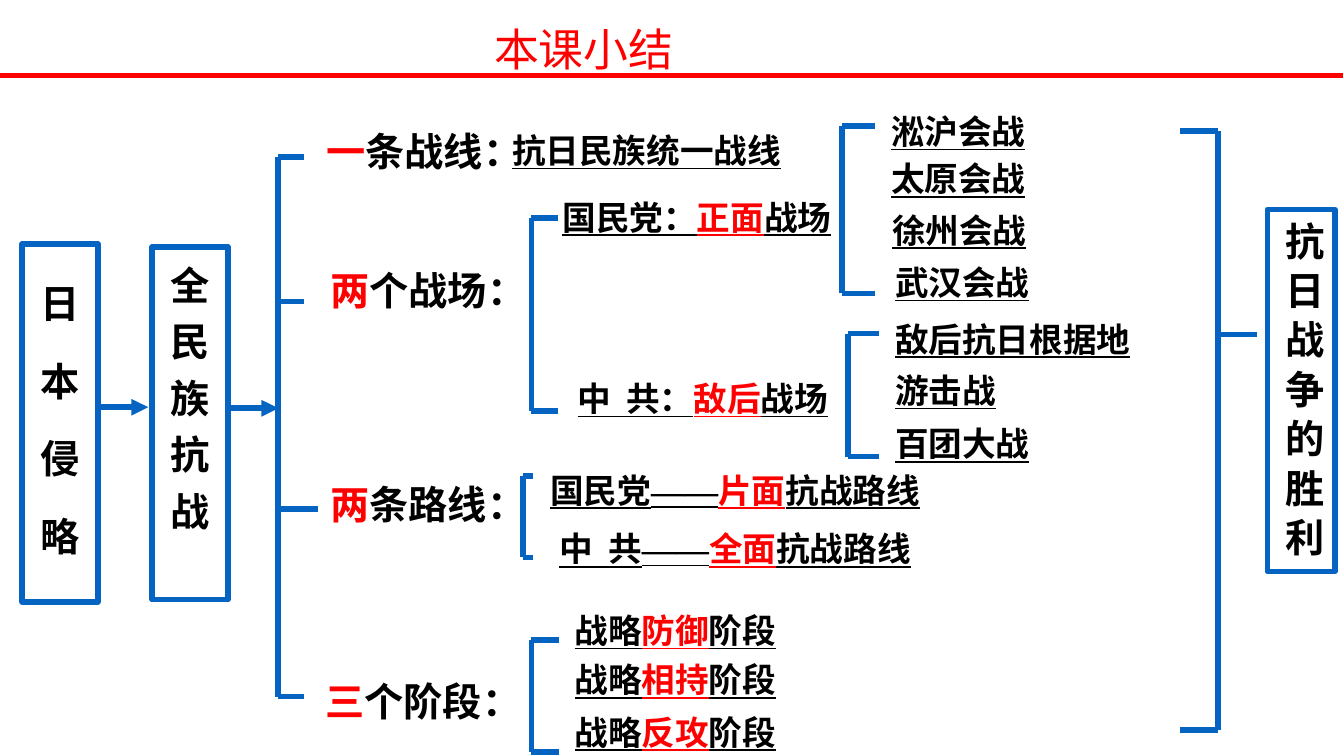
from lxml.etree import SubElement
from pptx import Presentation
from pptx.dml.color import RGBColor
from pptx.enum.shapes import MSO_CONNECTOR as CONNECTOR, MSO_SHAPE as SHAPE
from pptx.enum.text import MSO_ANCHOR as ANCHOR, MSO_AUTO_SIZE as AUTO_SIZE, PP_ALIGN as ALIGN
from pptx.oxml.ns import qn
from pptx.util import Pt

PX = 9144  # 100 px to the inch
BLUE = RGBColor(0x05, 0x63, 0xC1)
RED = RGBColor(0xFF, 0x00, 0x00)
BLACK = RGBColor(0x00, 0x00, 0x00)
SANS = "Noto Sans CJK SC"
SERIF = "Times New Roman"


def add_spans(para, text, size, color=BLACK, bold=True, underline=False):
    """Add runs split at "|"; a leading "*" makes a run red, and a dash run is serif."""
    for piece in text.split("|"):
        span = para.add_run()
        span.text = piece.lstrip("*")
        font = span.font
        font.name = SERIF if piece == "——" else SANS
        font.size = Pt(size)
        font.bold = bold
        font.underline = underline
        font.color.rgb = RED if piece.startswith("*") else color
        SubElement(font._element, qn("a:ea"), typeface=font.name)


def add_line(x1, y1, x2, y2, color=BLUE, width=4, arrow=False):
    line = slide.shapes.add_connector(
        CONNECTOR.STRAIGHT, x1 * PX, y1 * PX, x2 * PX, y2 * PX)
    line.line.color.rgb = color
    line.line.width = Pt(width)
    if arrow:
        SubElement(line.line._get_or_add_ln(), qn("a:tailEnd"), type="triangle")
    SubElement(line._element.spPr, qn("a:effectLst"))


deck = Presentation()
deck.slide_width, deck.slide_height = 1333 * PX, 750 * PX
slide = deck.slides.add_slide(deck.slide_layouts[5])

# Title and its rule
title = slide.shapes.title
title.left, title.top, title.width, title.height = 480 * PX, 17 * PX, 706 * PX, 64 * PX
title.text_frame.vertical_anchor = ANCHOR.TOP
title.text_frame.auto_size = AUTO_SIZE.NONE
title.text_frame.word_wrap = True
para = title.text_frame.paragraphs[0]
para.alignment = ALIGN.LEFT
add_spans(para, "本课小结", 32, RED, bold=False)
add_line(-2, 75, 1332, 75, RED, 3)

# Vertical boxes: left, top, width, height, line spacing, alignment, text
vertical_boxes = [
    (22, 242, 75, 355, 1.65, ALIGN.CENTER, "日本侵略"),
    (151, 245, 75, 350, 1.2, ALIGN.CENTER, "全民族抗战"),
    (1257, 208, 67, 359, 1.05, ALIGN.RIGHT, "抗日战争的胜利"),
]
for left, top, width, height, spacing, alignment, text in vertical_boxes:
    box = slide.shapes.add_shape(
        SHAPE.RECTANGLE, left * PX, top * PX, width * PX, height * PX)
    box.shadow.inherit = False
    box.fill.background()
    box.line.color.rgb = BLUE
    box.line.width = Pt(4)
    box.text_frame.word_wrap = True
    box.text_frame.vertical_anchor = ANCHOR.TOP
    para = box.text_frame.paragraphs[0]
    para.alignment = alignment
    para.line_spacing = spacing
    add_spans(para, text, 28)

add_line(97, 404, 147, 404, arrow=True)
add_line(226, 405, 276, 405, arrow=True)

# Brackets: spine x, tip x, top, bottom
brackets = [
    (276, 302, 156, 691),
    (527, 553, 216, 408),
    (519, 529, 472, 553),
    (527, 554, 635, 746),
    (835, 868, 125, 291),
    (841, 872, 331, 453),
    (1208, 1170, 130, 724),
]
for spine, tip, top, bottom in brackets:
    add_line(spine, top, spine, bottom)
    for y in (top, bottom):
        add_line(spine, y, tip, y)
add_line(276, 299, 302, 299)
add_line(276, 505, 315, 505)
add_line(1208, 332, 1247, 332)

# Labels: left, top, width, wrap, text
headings = [
    (314, 121, 215, False, "*一|条战线："),
    (318, 259, 217, False, "*两|个战场："),
    (318, 472, 216, False, "*两|条路线："),
    (313, 667, 216, False, "*三|个阶段："),
]
details = [
    (498, 124, 408, True, "抗日民族统一战线"),
    (548, 190, 288, False, "国民党：|*正面|战场"),
    (563, 370, 333, True, "中  共：|*敌后|战场"),
    (536, 461, 390, False, "国民党|——|*片面|抗战路线"),
    (545, 519, 378, False, "中  共|——|*全面|抗战路线"),
    (560, 600, 222, False, "战略|*防御|阶段"),
    (560, 649, 222, False, "战略|*相持|阶段"),
    (560, 701, 222, False, "战略|*反攻|阶段"),
    (874, 105, 155, False, "淞沪会战"),
    (874, 152, 155, False, "太原会战"),
    (875, 203, 155, False, "徐州会战"),
    (878, 255, 155, False, "武汉会战"),
    (878, 311, 256, False, "敌后抗日根据地"),
    (878, 362, 121, False, "游击战"),
    (878, 415, 155, False, "百团大战"),
]
for labels, size, height, underline in ((headings, 28, 57, False), (details, 24, 51, True)):
    for left, top, width, wrap, text in labels:
        box = slide.shapes.add_textbox(left * PX, top * PX, width * PX, height * PX)
        box.text_frame.word_wrap = wrap
        box.text_frame.auto_size = AUTO_SIZE.SHAPE_TO_FIT_TEXT
        add_spans(box.text_frame.paragraphs[0], text, size, underline=underline)

deck.save("out.pptx")
